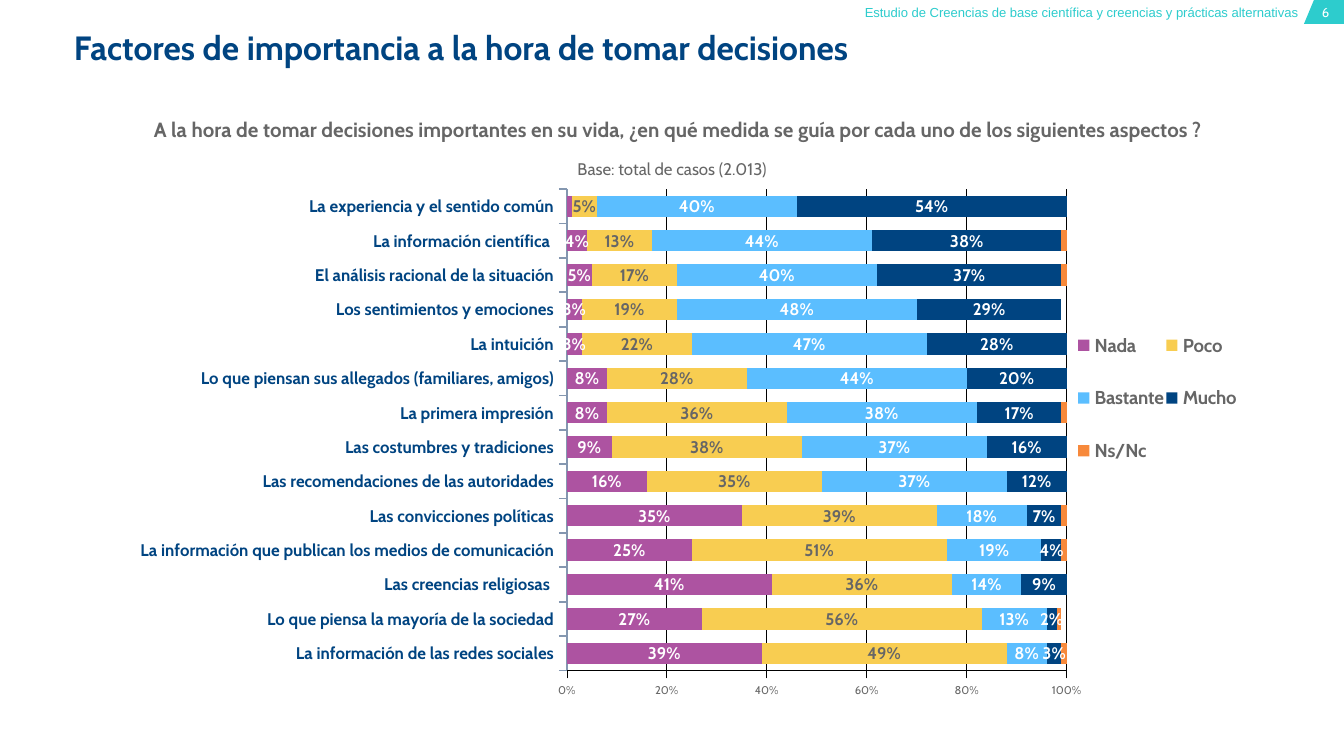
from lxml import etree
from pptx import Presentation
from pptx.chart.data import CategoryChartData
from pptx.dml.color import RGBColor
from pptx.enum.chart import XL_CHART_TYPE, XL_LEGEND_POSITION, XL_TICK_MARK
from pptx.enum.text import PP_ALIGN
from pptx.oxml import parse_xml
from pptx.oxml.ns import nsdecls, qn
from pptx.util import Emu, Pt

LEFT, CENTER, RIGHT = PP_ALIGN.LEFT, PP_ALIGN.CENTER, PP_ALIGN.RIGHT
BAR_STACKED = XL_CHART_TYPE.BAR_STACKED
LEGEND_BOTTOM = XL_LEGEND_POSITION.BOTTOM
TICK_OUTSIDE = XL_TICK_MARK.OUTSIDE

WHITE = RGBColor(0xFF, 0xFF, 0xFF)
BLACK = RGBColor(0, 0, 0)
TEAL = RGBColor(0x2D, 0xCC, 0xCD)
NAVY = RGBColor(0x00, 0x44, 0x81)
GREY = RGBColor(0x66, 0x66, 0x66)
AXIS_GREY = RGBColor(0x84, 0x97, 0xB0)
PURPLE = RGBColor(0xAD, 0x53, 0xA1)
YELLOW = RGBColor(0xF8, 0xCD, 0x51)
SKY = RGBColor(0x5B, 0xBE, 0xFF)
ORANGE = RGBColor(0xF7, 0x89, 0x3B)

FONT = "Cabin"
PX_PER_INCH = 134.4

FACTORS = [
    ("La información de las redes sociales", 39, 49, 8, 3, 1),
    ("Lo que piensa la mayoría de la sociedad", 27, 56, 13, 2, 1),
    ("Las creencias religiosas ", 41, 36, 14, 9, 0),
    ("La información que publican los medios de comunicación", 25, 51, 19, 4, 1),
    ("Las convicciones políticas", 35, 39, 18, 7, 1),
    ("Las recomendaciones de las autoridades", 16, 35, 37, 12, 1),
    ("Las costumbres y tradiciones", 9, 38, 37, 16, 0),
    ("La primera impresión", 8, 36, 38, 17, 1),
    ("Lo que piensan sus allegados (familiares, amigos)", 8, 28, 44, 20, 1),
    ("La intuición", 3, 22, 47, 28, 0),
    ("Los sentimientos y emociones", 3, 19, 48, 29, 0),
    ("El análisis racional de la situación", 5, 17, 40, 37, 1),
    ("La información científica ", 4, 13, 44, 38, 1),
    ("La experiencia y el sentido común", 1, 5, 40, 54, 0),
]
ANSWERS = [
    ("Nada", PURPLE, WHITE),
    ("Poco", YELLOW, GREY),
    ("Bastante", SKY, WHITE),
    ("Mucho", NAVY, WHITE),
    ("Ns/Nc", ORANGE, None),
]


def px(length):
    return Emu(round(length * 914400 / PX_PER_INCH))


def style_font(font, size, color, bold=False, name=FONT):
    font.name = name
    font.size = Pt(size)
    font.bold = bold
    font.color.rgb = color


def add_text(slide, box, text, size, color, align=LEFT, bold=False, name=FONT):
    frame = slide.shapes.add_textbox(*map(px, box)).text_frame
    frame.word_wrap = True
    frame.margin_left = frame.margin_right = 0
    frame.margin_top = frame.margin_bottom = 0
    paragraph = frame.paragraphs[0]
    paragraph.alignment = align
    run = paragraph.add_run()
    run.text = text
    style_font(run.font, size, color, bold, name)


def add_header(slide, box):
    left, top, width, height = box
    tab_left = left + width - 40
    builder = slide.shapes.build_freeform(px(tab_left + 10), px(top))
    builder.add_line_segments([
        (px(left + width), px(top)),
        (px(left + width), px(top + height)),
        (px(tab_left), px(top + height)),
    ])
    page_tab = builder.convert_to_shape()
    page_tab.shadow.inherit = False
    page_tab.fill.solid()
    page_tab.fill.fore_color.rgb = TEAL
    page_tab.line.fill.background()
    add_text(slide, (tab_left + 6, top + 4, 31, 16), "6", 7, WHITE, CENTER)
    add_text(slide, (left, top + 5, width - 46, 16),
             "Estudio de Creencias de base científica y creencias y prácticas alternativas",
             7, TEAL, RIGHT, name="Arial")


def set_layout(element, before, x, y, width, height, inner=False):
    for old in element.findall(qn("c:layout")):
        element.remove(old)
    layout = parse_xml(f"<c:layout {nsdecls('c')}><c:manualLayout/></c:layout>")
    manual = layout[0]
    settings = [("layoutTarget", "inner")] if inner else []
    settings += [("xMode", "edge"), ("yMode", "edge"),
                 ("x", x), ("y", y), ("w", width), ("h", height)]
    for tag, value in settings:
        etree.SubElement(manual, qn(f"c:{tag}")).set("val", str(value))
    element.find(qn(before)).addprevious(layout)


def style_axes(chart):
    factor_axis = chart.category_axis
    factor_axis.major_tick_mark = TICK_OUTSIDE
    factor_axis.format.line.color.rgb = AXIS_GREY
    factor_axis.format.line.width = Pt(1)
    style_font(factor_axis.tick_labels.font, 9, NAVY, True)

    share_axis = chart.value_axis
    share_axis.minimum_scale, share_axis.maximum_scale = 0, 1
    share_axis.major_unit = 0.2
    share_axis.major_tick_mark = TICK_OUTSIDE
    share_axis.has_major_gridlines = True
    for line in (share_axis.format.line, share_axis.major_gridlines.format.line):
        line.color.rgb = BLACK
        line.width = Pt(0.25)
    share_axis.tick_labels.number_format = "0%"
    share_axis.tick_labels.number_format_is_linked = False
    style_font(share_axis.tick_labels.font, 6, GREY)


def style_series(series, fill_color, label_color):
    series.format.fill.solid()
    series.format.fill.fore_color.rgb = fill_color
    if label_color is None:
        return
    labels = series.data_labels
    labels.show_value = True
    labels.number_format = "0%"
    labels.number_format_is_linked = False
    style_font(labels.font, 9, label_color, True)


def hide_label(series, index):
    hidden = parse_xml(f'<c:dLbl {nsdecls("c")}><c:idx val="{index}"/>'
                       '<c:delete val="1"/></c:dLbl>')
    series.data_labels._element.insert(0, hidden)


def add_factor_chart(slide, box):
    data = CategoryChartData(number_format="0%")
    data.categories = [factor[0] for factor in FACTORS]
    for column, (answer, _, _) in enumerate(ANSWERS, start=1):
        data.add_series(answer, [factor[column] / 100 for factor in FACTORS])
    chart = slide.shapes.add_chart(BAR_STACKED, *map(px, box), data).chart
    chart.has_title = False
    style_font(chart.font, 9, NAVY)
    plot = chart.plots[0]
    plot.gap_width = 60
    plot.overlap = 100
    plot.vary_by_categories = False
    style_axes(chart)
    for series, (_, fill_color, label_color) in zip(plot.series, ANSWERS):
        style_series(series, fill_color, label_color)
    hide_label(plot.series[0], len(FACTORS) - 1)

    chart.has_legend = True
    legend = chart.legend
    legend.position = LEGEND_BOTTOM
    legend.include_in_layout = False
    style_font(legend.font, 10, GREY, True)
    set_layout(legend._element, "c:overlay", 0.86, 0.33, 0.14, 0.32)
    plot_area = chart._chartSpace.chart.plotArea
    set_layout(plot_area, "c:barChart", 0.423, 0.136, 0.429, 0.816, inner=True)


def add_survey(slide, box):
    left, top, width, height = box
    add_text(slide, (left, top, width, 32),
             "A la hora de tomar decisiones importantes en su vida, ¿en qué medida "
             "se guía por cada uno de los siguientes aspectos ?",
             11, GREY, CENTER, True)
    add_factor_chart(slide, (left + 19, top - 8, 1165, height))
    add_text(slide, (left + 336, top + 42, 562, 24),
             "Base: total de casos (2.013)", 9, GREY, CENTER)


def main():
    presentation = Presentation()
    presentation.slide_width, presentation.slide_height = px(1344), px(756)
    slide = presentation.slides.add_slide(presentation.slide_layouts[6])
    add_header(slide, (0, 0, 1344, 24))
    add_text(slide, (74, 27, 1184, 50),
             "Factores de importancia a la hora de tomar decisiones", 18, NAVY, bold=True)
    add_survey(slide, (55, 117, 1247, 590))
    presentation.save("out.pptx")


if __name__ == "__main__":
    main()
